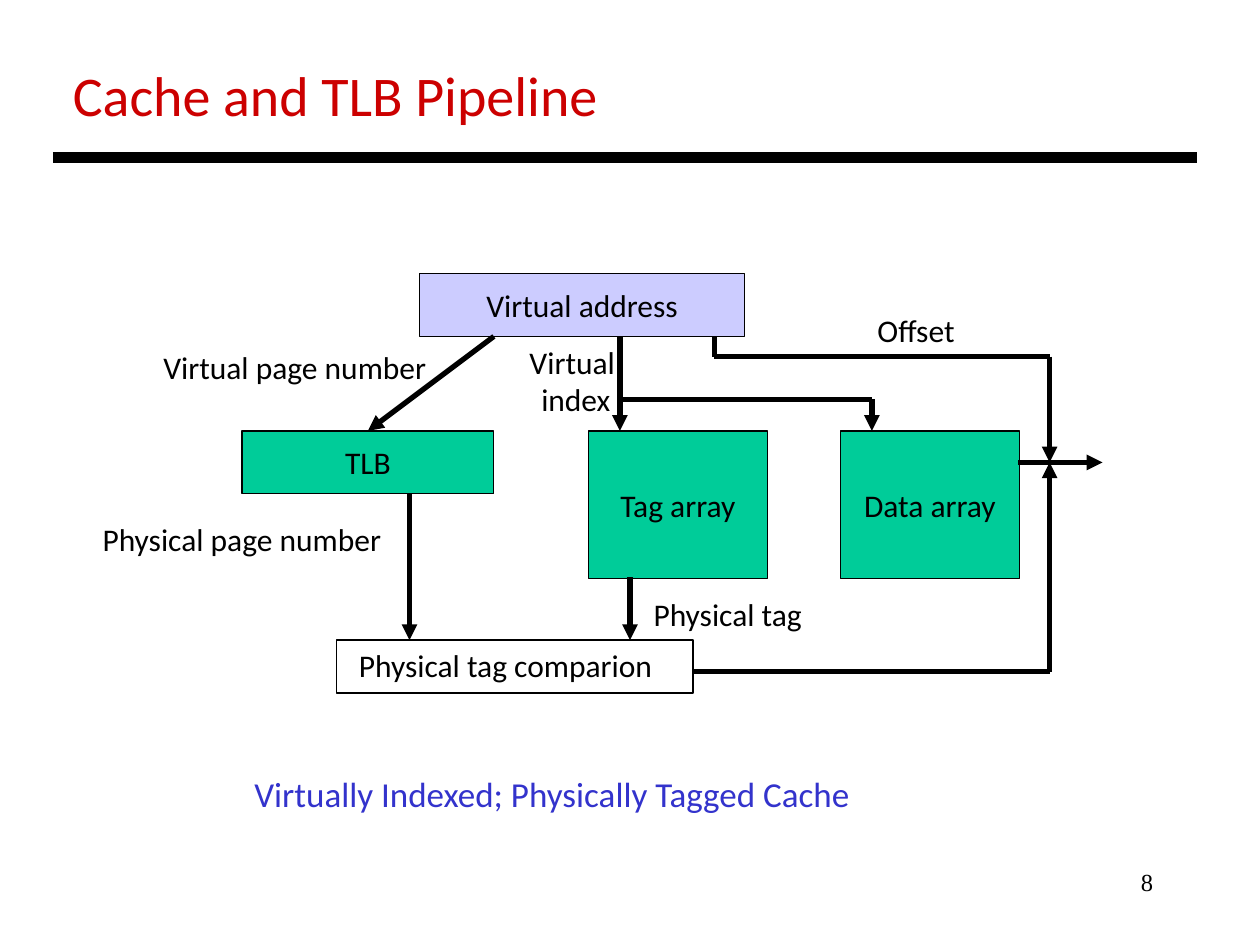
from pptx import Presentation
from pptx.dml.color import RGBColor
from pptx.enum.shapes import MSO_CONNECTOR, MSO_SHAPE
from pptx.enum.text import MSO_ANCHOR, MSO_AUTO_SIZE, PP_ALIGN
from pptx.oxml.ns import qn
from pptx.util import Inches, Pt
from lxml import etree

BLACK = RGBColor(0x00, 0x00, 0x00)
RED = RGBColor(0xCC, 0x00, 0x00)
BLUE = RGBColor(0x33, 0x33, 0xCC)
LAVENDER = RGBColor(0xCC, 0xCC, 0xFF)
GREEN = RGBColor(0x00, 0xCC, 0x99)

LEFT, CENTER, RIGHT = PP_ALIGN.LEFT, PP_ALIGN.CENTER, PP_ALIGN.RIGHT
MIDDLE = MSO_ANCHOR.MIDDLE
FIT_SHAPE = MSO_AUTO_SIZE.SHAPE_TO_FIT_TEXT
RECTANGLE = MSO_SHAPE.RECTANGLE
STRAIGHT = MSO_CONNECTOR.STRAIGHT


class Diagram:
    font = "Calibri"
    size = 18
    outline = 0.75
    arrow_width = 3

    def __init__(self, page):
        self.page = page

    def add_text(self, frame, lines, align, size=None, color=BLACK, font=None):
        frame.word_wrap = False
        for index, line in enumerate(lines):
            para = frame.paragraphs[0] if index == 0 else frame.add_paragraph()
            para.alignment = align
            span = para.add_run()
            span.text = line
            span.font.name = font or self.font
            span.font.size = Pt(size or self.size)
            span.font.color.rgb = color

    def label(self, bounds, *lines, align=CENTER, **style):
        box = self.page.shapes.add_textbox(*map(Inches, bounds))
        self.add_text(box.text_frame, lines, align, **style)
        box.text_frame.auto_size = FIT_SHAPE

    def block(self, bounds, text=None, fill=None):
        box = self.page.shapes.add_shape(RECTANGLE, *map(Inches, bounds))
        box.shadow.inherit = False
        if fill is None:
            box.fill.background()
        else:
            box.fill.solid()
            box.fill.fore_color.rgb = fill
        box.line.color.rgb = BLACK
        box.line.width = Pt(self.outline)
        if text:
            box.text_frame.vertical_anchor = MIDDLE
            self.add_text(box.text_frame, [text], CENTER)

    def route(self, *points, arrow=True, width=None):
        """Join the points with straight lines, the last one with an arrowhead."""
        for start, end in zip(points, points[1:]):
            connector = self.page.shapes.add_connector(
                STRAIGHT, *map(Inches, start + end))
            connector.line.color.rgb = BLACK
            connector.line.width = Pt(width or self.arrow_width)
            properties = connector.element.spPr
            if arrow and end == points[-1]:
                etree.SubElement(properties.find(qn("a:ln")), qn("a:tailEnd"),
                                 type="triangle")
            etree.SubElement(properties, qn("a:effectLst"))


def main():
    deck = Presentation()
    deck.slide_width, deck.slide_height = Inches(10), Inches(7.5)
    diagram = Diagram(deck.slides.add_slide(deck.slide_layouts[6]))

    # Title, rule and page number
    diagram.label((0.48, 0.43, 4.41, 0.64), "Cache and TLB Pipeline",
                  align=LEFT, size=32, color=RED)
    diagram.route((0.42, 1.25), (9.5, 1.25), arrow=False, width=6)
    diagram.label((7.17, 6.83, 2.08, 0.5), "8",
                  align=RIGHT, size=14, font="Times New Roman")

    # Blocks
    address_bottom, array_top, array_bottom = 2.67, 3.42, 4.58
    compare_top = 5.08
    diagram.block((3.33, 2.17, 2.58, 0.5), "Virtual address", LAVENDER)
    diagram.block((1.92, array_top, 2, 0.5), "TLB", GREEN)
    for left, name in ((4.67, "Tag array"), (6.67, "Data array")):
        diagram.block((left, array_top, 1.42, 1.17), name, GREEN)
    diagram.block((2.67, compare_top, 2.83, 0.42))
    diagram.label((2.75, compare_top, 2.55, 0.4), "Physical tag comparion",
                  align=LEFT)

    # Virtual address to the TLB and both arrays
    index_x, branch_y, data_x = 4.92, 3.17, 6.92
    diagram.route((3.92, address_bottom), (2.92, array_top))
    diagram.route((index_x, address_bottom), (index_x, array_top))
    diagram.route((index_x, branch_y), (data_x, branch_y), (data_x, array_top))

    # TLB and tag array to the comparison
    diagram.route((3.25, 3.92), (3.25, compare_top))
    diagram.route((5, array_bottom), (5, compare_top))

    # Data output, with the offset and the comparison result joining it
    output_x, output_y = 8.33, 3.67
    diagram.route((8.08, output_y), (8.75, output_y))
    diagram.route((5.67, address_bottom), (5.67, 2.83), (output_x, 2.83),
                  (output_x, output_y))
    diagram.route((5.5, 5.33), (output_x, 5.33), (output_x, output_y))

    # Signal names
    diagram.label((1.18, 2.71, 2.32, 0.4), "Virtual page number")
    diagram.label((4.08, 2.67, 0.98, 0.7), "Virtual ", "index")
    diagram.label((6.86, 2.42, 0.82, 0.4), "Offset")
    diagram.label((0.7, 4.08, 2.44, 0.4), "Physical page number")
    diagram.label((5.08, 4.67, 1.39, 0.4), "Physical tag")

    # Caption
    diagram.label((1.92, 6.08, 4.97, 0.44),
                  "Virtually Indexed; Physically Tagged Cache",
                  align=LEFT, size=20, color=BLUE)

    deck.save("out.pptx")


if __name__ == "__main__":
    main()
